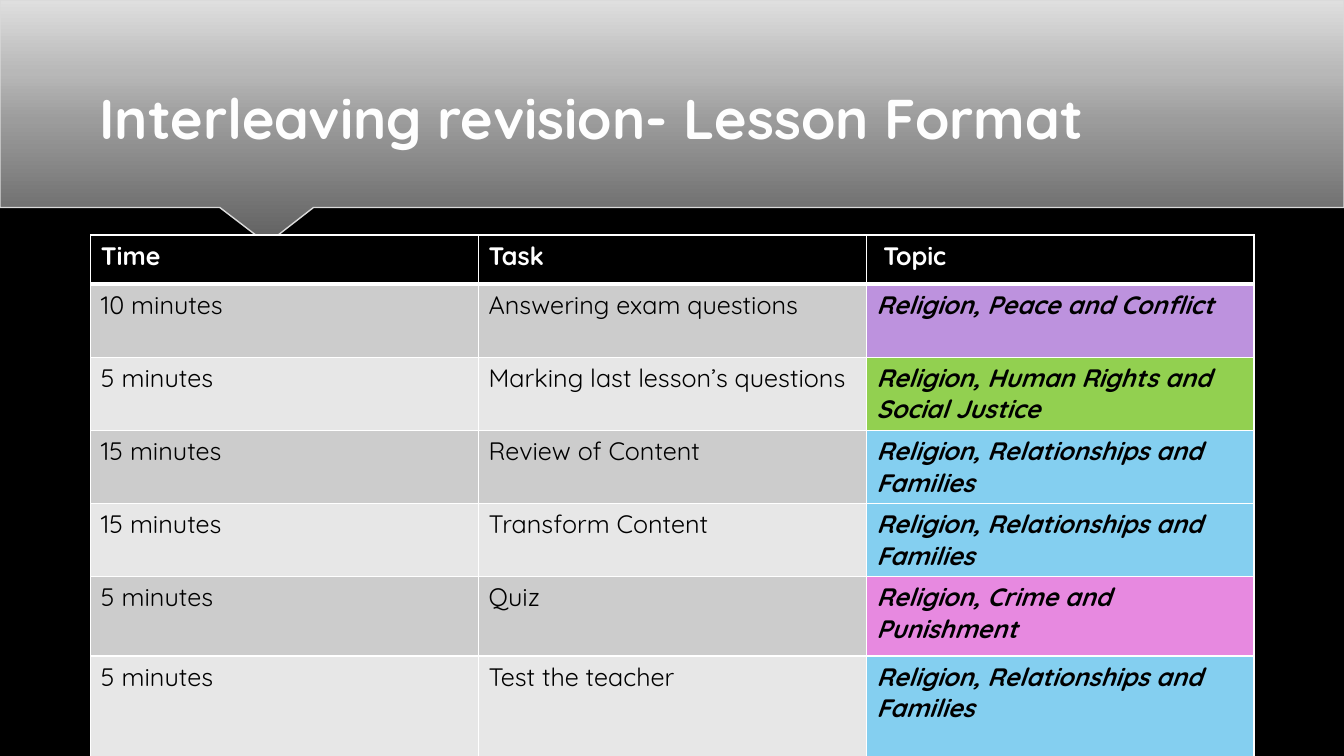
"""Builds the interleaving revision lesson format slide."""
from dataclasses import dataclass
from typing import Any

from pptx import Presentation
from pptx.dml.color import RGBColor
from pptx.enum.text import MSO_ANCHOR
from pptx.oxml import parse_xml
from pptx.util import Cm, Pt

NAMESPACE = 'xmlns:a="http://schemas.openxmlformats.org/drawingml/2006/main"'


@dataclass(frozen=True)
class Theme:
    font: str = "Quicksand"
    title_size: float = 40
    table_size: float = 18
    background: str = "000000"
    title: str = "FEFEFE"
    text: str = "000000"
    header_text: str = "FFFFFF"
    header_fill: str = "000000"
    bands: tuple[str, str] = ("CCCCCC", "E7E7E7")
    border: str = "FFFFFF"
    banner_line: str = "DADADA"
    banner_stops: tuple[tuple[int, str], ...] = (
        (0, "616161"), (50, "9C9C9C"), (70, "B8B8B8"), (100, "DFDFDF"))
    peace: str = "BD92DE"
    rights: str = "92D050"
    families: str = "84CFF0"
    crime: str = "E789E0"


@dataclass(frozen=True)
class Activity:
    time: str
    task: str
    topic: str
    topic_fill: str
    height: float = 1.84


THEME = Theme()
SLIDE_WIDTH, SLIDE_HEIGHT = 33.87, 19.05
HEADINGS = ("Time", "Task", " Topic")
HEADER_HEIGHT = 1.24
COLUMN_WIDTH = 9.77
FAMILIES = "Religion, Relationships and Families"
ACTIVITIES = (
    Activity("10 minutes", "Answering exam questions",
             "Religion, Peace and Conflict", THEME.peace),
    Activity("5 minutes", "Marking last lesson’s questions",
             "Religion, Human Rights and Social Justice", THEME.rights),
    Activity("15 minutes", "Review of Content", FAMILIES, THEME.families),
    Activity("15 minutes", "Transform Content", FAMILIES, THEME.families),
    Activity("5 minutes", "Quiz", "Religion, Crime and Punishment", THEME.crime, 2.01),
    Activity("5 minutes", "Test the teacher", FAMILIES, THEME.families, 2.54),
)
BANNER_OUTLINE = (
    (SLIDE_WIDTH, 0), (0, 0), (0, 5.23), (5.54, 5.23), (6.6, 6.04), (6.66, 6.06),
    (6.73, 6.07), (6.8, 6.06), (6.86, 6.04), (7.9, 5.23), (SLIDE_WIDTH, 5.23))


def apply_format(target: Any, values: dict[str, Any]) -> None:
    for name, value in values.items():
        setattr(target, name, value)


def paint(fill: Any, color: str) -> None:
    fill.solid()
    fill.fore_color.rgb = RGBColor.from_string(color)


def shadow(blur: float, distance: float, opacity: int) -> Any:
    return parse_xml(
        f'<a:effectLst {NAMESPACE}><a:outerShdw blurRad="{Pt(blur)}" dist="{Pt(distance)}" '
        f'dir="5400000" rotWithShape="0"><a:srgbClr val="000000">'
        f'<a:alpha val="{opacity * 1000}"/></a:srgbClr></a:outerShdw></a:effectLst>')


def write(frame: Any, text: str, size: float, color: str, **style: bool) -> Any:
    span = frame.paragraphs[0].add_run()
    span.text = text
    apply_format(span.font, {"name": THEME.font, "size": Pt(size), **style})
    span.font.color.rgb = RGBColor.from_string(color)
    return span


def add_banner(page: Any) -> None:
    start, *corners = [(Cm(x), Cm(y)) for x, y in BANNER_OUTLINE]
    builder = page.shapes.build_freeform(*start)
    builder.add_line_segments(corners, close=True)
    banner = builder.convert_to_shape()
    banner.line.width = Pt(1)
    banner.line.color.rgb = RGBColor.from_string(THEME.banner_line)
    banner.fill.gradient()
    banner.fill.gradient_angle = 90
    properties = banner.element.spPr
    stop_list = properties.find(".//{*}gsLst")
    stop_list.clear()
    for position, color in THEME.banner_stops:
        stop_list.append(parse_xml(
            f'<a:gs {NAMESPACE} pos="{position * 1000}"><a:srgbClr val="{color}"/></a:gs>'))
    properties.append(shadow(4, 3, 35))


def add_title(page: Any, text: str) -> None:
    box = page.shapes.add_textbox(Cm(2.26), Cm(1.24), Cm(29.36), Cm(2.69))
    apply_format(box.text_frame, {"word_wrap": True, "vertical_anchor": MSO_ANCHOR.BOTTOM})
    span = write(box.text_frame, text, THEME.title_size, THEME.title, bold=True)
    span.font.fill._xPr.find("{*}solidFill").addnext(shadow(4, 2, 60))


def add_borders(cell: Any, top: float, bottom: float) -> None:
    widths = {"lnL": 1, "lnR": 1, "lnT": top, "lnB": bottom}
    properties = cell._tc.get_or_add_tcPr()
    for index, (side, width) in enumerate(widths.items()):
        properties.insert(index, parse_xml(
            f'<a:{side} {NAMESPACE} w="{Pt(width)}"><a:solidFill>'
            f'<a:srgbClr val="{THEME.border}"/></a:solidFill></a:{side}>'))


def fill_cell(cell: Any, text: str, fill: str, color: str,
              top: float = 1, bottom: float = 1, **style: bool) -> None:
    paint(cell.fill, fill)
    add_borders(cell, top, bottom)
    write(cell.text_frame, text, THEME.table_size, color, **style)


def add_schedule(page: Any) -> None:
    heights = [HEADER_HEIGHT, *(activity.height for activity in ACTIVITIES)]
    table = page.shapes.add_table(
        len(heights), len(HEADINGS), Cm(2.29), Cm(5.92),
        Cm(COLUMN_WIDTH * len(HEADINGS)), Cm(sum(heights))).table
    for column in table.columns:
        column.width = Cm(COLUMN_WIDTH)
    for row, height in zip(table.rows, heights):
        row.height = Cm(height)
    for column, heading in enumerate(HEADINGS):
        fill_cell(table.cell(0, column), heading, THEME.header_fill,
                  THEME.header_text, bottom=3, bold=True)
    for row, activity in enumerate(ACTIVITIES, start=1):
        band = THEME.bands[(row - 1) % 2]
        top = 3 if row == 1 else 1
        for column, text in enumerate((activity.time, activity.task)):
            fill_cell(table.cell(row, column), text, band, THEME.text, top, bold=False)
        fill_cell(table.cell(row, 2), activity.topic, activity.topic_fill,
                  THEME.text, top, bold=True, italic=True)


def main() -> None:
    deck = Presentation()
    apply_format(deck, {"slide_width": Cm(SLIDE_WIDTH), "slide_height": Cm(SLIDE_HEIGHT)})
    page = deck.slides.add_slide(deck.slide_layouts[6])
    paint(page.background.fill, THEME.background)
    add_banner(page)
    add_title(page, "Interleaving revision- Lesson Format")
    add_schedule(page)
    deck.save("out.pptx")


if __name__ == "__main__":
    main()
